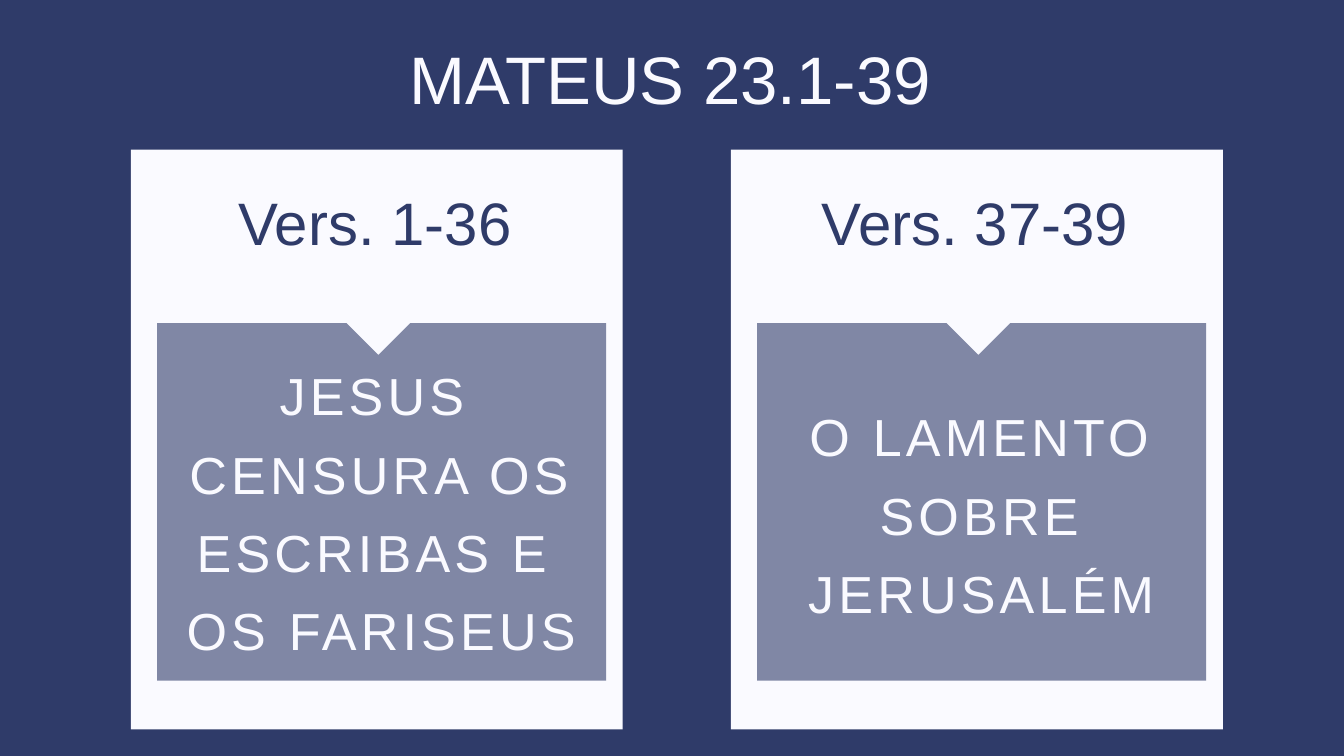
from lxml import etree
from pptx import Presentation
from pptx.dml.color import RGBColor
from pptx.enum.shapes import MSO_SHAPE
from pptx.enum.text import MSO_ANCHOR, MSO_AUTO_SIZE, PP_ALIGN
from pptx.oxml.ns import qn
from pptx.util import Cm, Pt

RECTANGLE = MSO_SHAPE.RECTANGLE
TOP = MSO_ANCHOR.TOP
NO_AUTOFIT = MSO_AUTO_SIZE.NONE
CENTER = PP_ALIGN.CENTER

FONT = "Arial"
NAVY = "2F3B69"
WHITE = "FAFAFF"
COLUMN_STEP = 22.68
NOTCH = [(16.03, 11.68), (14.3, 13.41), (12.32, 11.43)]
COLUMNS = [
    ("Vers. 1-36", ["JESUS ", "CENSURA OS ESCRIBAS E ", "OS FARISEUS"], 13.16, 11.61),
    ("Vers. 37-39", ["O LAMENTO SOBRE JERUSALÉM"], 14.71, 14.55),
]


def color(value):
    return RGBColor.from_string(value)


def paint(shape, fill, opacity=100):
    shape.shadow.inherit = False
    shape.fill.solid()
    shape.fill.fore_color.rgb = color(fill)
    shape.line.fill.background()
    if opacity < 100:
        fill_color = shape.fill._xPr.find(qn("a:solidFill"))[0]
        etree.SubElement(fill_color, qn("a:alpha"), val=str(opacity * 1000))


def add_rectangle(slide, left, top, width, height, fill, opacity=100):
    shape = slide.shapes.add_shape(RECTANGLE, Cm(left), Cm(top), Cm(width), Cm(height))
    paint(shape, fill, opacity)


def add_notch(slide, shift):
    points = [(Cm(x + shift), Cm(y)) for x, y in NOTCH]
    builder = slide.shapes.build_freeform(*points[0], scale=1.0)
    builder.add_line_segments(points[1:], close=True)
    paint(builder.convert_to_shape(), WHITE)


def write_text(shape, lines, size, line_height, text_color, spacing=0):
    frame = shape.text_frame
    frame.word_wrap = True
    frame.auto_size = NO_AUTOFIT
    frame.vertical_anchor = TOP
    frame.margin_left = frame.margin_right = 0
    frame.margin_top = frame.margin_bottom = 0
    for index, line in enumerate(lines):
        paragraph = frame.add_paragraph() if index else frame.paragraphs[0]
        paragraph.alignment = CENTER
        paragraph.line_spacing = Pt(line_height)
        run = paragraph.add_run()
        run.text = line
        run.font.name = FONT
        run.font.size = Pt(size)
        run.font.color.rgb = color(text_color)
        if spacing:
            run.font._element.set("spc", str(int(spacing * 100)))


def add_title(slide, text):
    title = slide.shapes.title
    title.left, title.top = Cm(12.85), Cm(1.12)
    title.width, title.height = Cm(24.99), Cm(3.28)
    write_text(title, [text], 72, 94.3, WHITE)


def add_column(slide, shift, heading, lines, body_top, body_height):
    add_rectangle(slide, 4.95 + shift, 5.66, 18.59, 21.92, WHITE)
    add_rectangle(slide, 5.94 + shift, 12.22, 16.97, 13.51, NAVY, 60)
    heading_box = slide.shapes.add_textbox(Cm(3.58 + shift), Cm(6.83), Cm(21.18), Cm(2.87))
    write_text(heading_box, [heading], 64.2, 82.8, NAVY)
    body_box = slide.shapes.add_textbox(
        Cm(5.23 + shift), Cm(body_top), Cm(18.36), Cm(body_height))
    write_text(body_box, lines, 55.8, 83.8, WHITE, 4.5)
    add_notch(slide, shift)


def main():
    presentation = Presentation()
    presentation.slide_width = Cm(50.8)
    presentation.slide_height = Cm(28.58)
    slide = presentation.slides.add_slide(presentation.slide_layouts[5])
    slide.background.fill.solid()
    slide.background.fill.fore_color.rgb = color(NAVY)
    add_title(slide, "MATEUS 23.1-39")
    for index, column in enumerate(COLUMNS):
        add_column(slide, index * COLUMN_STEP, *column)
    presentation.save("out.pptx")


if __name__ == "__main__":
    main()
